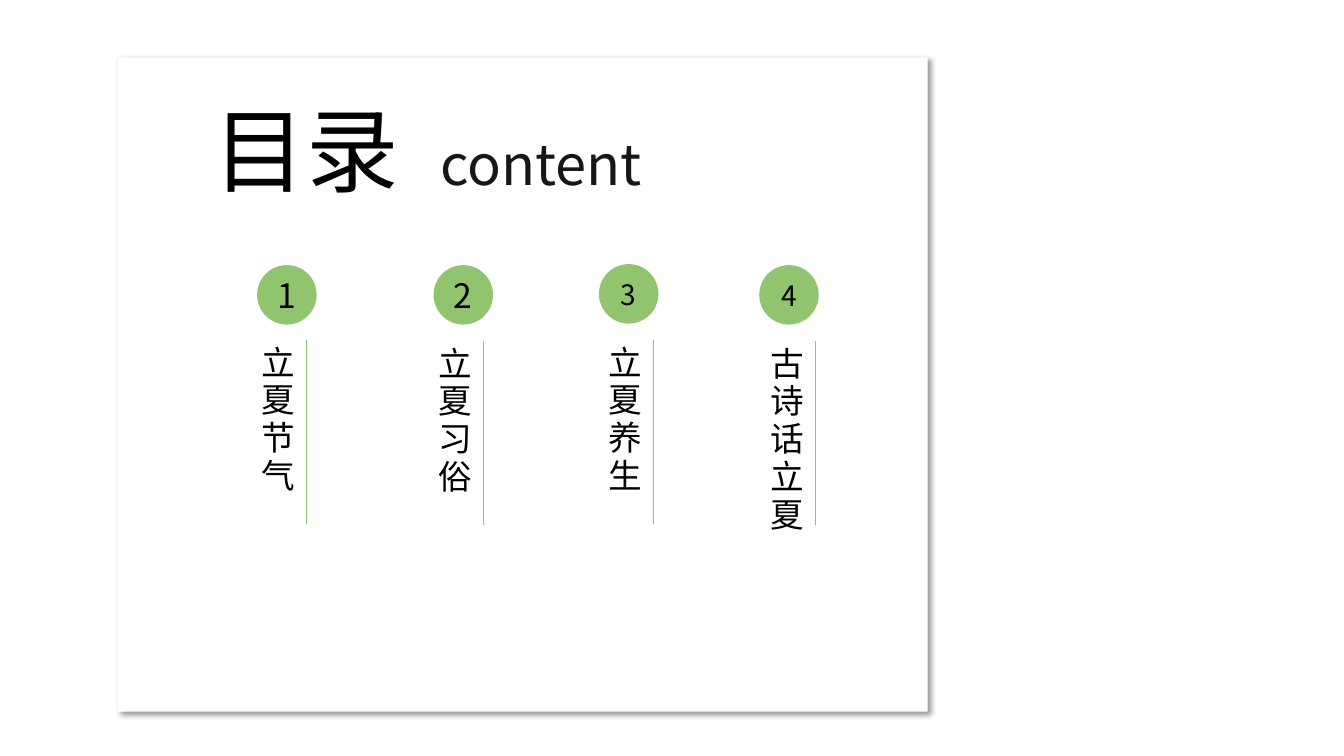
"""Build the contents slide: a shadowed card, a heading and four numbered vertical topics."""
from dataclasses import dataclass

from lxml import etree
from pptx import Presentation
from pptx.dml.color import RGBColor
from pptx.enum.shapes import MSO_CONNECTOR, MSO_SHAPE
from pptx.enum.text import MSO_ANCHOR, MSO_AUTO_SIZE, PP_ALIGN
from pptx.oxml.ns import qn
from pptx.util import Inches, Pt

STRAIGHT = MSO_CONNECTOR.STRAIGHT
RECTANGLE, OVAL = MSO_SHAPE.RECTANGLE, MSO_SHAPE.OVAL
MIDDLE, CENTER = MSO_ANCHOR.MIDDLE, PP_ALIGN.CENTER
GROW = MSO_AUTO_SIZE.SHAPE_TO_FIT_TEXT

HEADING, SUBHEADING = "目录", "content"
TOPICS = [
    {"number": "1", "label": "立夏节气", "badge": 2.55, "rule": 3.04, "top": 2.63, "rule_top": 3.37, "size": 24},
    {"number": "2", "label": "立夏习俗", "badge": 4.3, "rule": 4.79, "top": 2.63, "rule_top": 3.38, "size": 24},
    {"number": "3", "label": "立夏养生", "badge": 5.94, "rule": 6.48, "top": 2.62, "rule_top": 3.37, "size": 20},
    {"number": "4", "label": "古诗话立夏", "badge": 7.53, "rule": 8.09, "top": 2.63, "rule_top": 3.38, "size": 20},
]
SLIDE_SIZE = (13.33, 7.5)
CARD = (1.17, 0.57, 8.03, 6.49)
HEADING_BOX = (1.76, 0.92, 4.97, 1.1)
BADGE_SIZE, RULE_LENGTH = 0.59, 1.83
LABEL_SIZE, LABEL_INSET, LABEL_RISE = (0.61, 2.11), 0.65, 0.04


@dataclass(frozen=True)
class Theme:
    font: str = "Noto Sans CJK SC"
    card: str = "FFFFFF"
    ink: str = "000000"
    soft_ink: str = "181717"
    green: str = "91C46E"
    heading: int = 66
    subheading: int = 40
    label: int = 24
    rule: float = 0.5
    label_spacing: int = 3
    heading_gap: int = 15


THEME = Theme()


def inches(values):
    return [Inches(value) for value in values]


def drop_shadow():
    effects = etree.Element(qn("a:effectLst"))
    shadow = etree.SubElement(effects, qn("a:outerShdw"), blurRad=str(Pt(4)), dist=str(Pt(3)),
                              dir=str(45 * 60000), algn="tl", rotWithShape="0")
    color = etree.SubElement(shadow, qn("a:srgbClr"), val=THEME.ink)
    etree.SubElement(color, qn("a:alpha"), val="40000")
    return effects


def add_run(paragraph, text, size, color=THEME.ink, spacing=0, shadow=False):
    run = paragraph.add_run()
    run.text = text
    for name, value in {"size": Pt(size), "name": THEME.font, "bold": False}.items():
        setattr(run.font, name, value)
    run.font.color.rgb = RGBColor.from_string(color)
    properties = run.font._element
    latin = properties.find(qn("a:latin"))
    latin.addnext(etree.Element(qn("a:ea"), typeface=THEME.font))
    if spacing:
        properties.set("spc", str(spacing * 100))
    if shadow:
        latin.addprevious(drop_shadow())


def add_solid(shapes, kind, box, color):
    solid = shapes.add_shape(kind, *inches(box))
    solid.shadow.inherit = False
    solid.fill.solid()
    solid.fill.fore_color.rgb = RGBColor.from_string(color)
    solid.line.fill.background()
    return solid


def centered_paragraph(frame):
    frame.vertical_anchor = MIDDLE
    paragraph = frame.paragraphs[0]
    paragraph.alignment = CENTER
    return paragraph


def add_card(shapes):
    card = add_solid(shapes, RECTANGLE, CARD, THEME.card)
    properties = card._element.spPr
    properties.replace(properties.find(qn("a:effectLst")), drop_shadow())


def add_heading(shapes):
    frame = shapes.add_textbox(*inches(HEADING_BOX)).text_frame
    frame.word_wrap = True
    paragraph = centered_paragraph(frame)
    add_run(paragraph, HEADING, THEME.heading, shadow=True)
    add_run(paragraph, " ", THEME.heading, spacing=THEME.heading_gap)
    add_run(paragraph, SUBHEADING, THEME.subheading, THEME.soft_ink, shadow=True)


def add_topic(shapes, topic):
    badge_box = (topic["badge"], topic["top"], BADGE_SIZE, BADGE_SIZE)
    badge = add_solid(shapes, OVAL, badge_box, THEME.green)
    add_run(centered_paragraph(badge.text_frame), topic["number"], topic["size"])

    label_box = (topic["rule"] - LABEL_INSET, topic["rule_top"] - LABEL_RISE, *LABEL_SIZE)
    frame = shapes.add_textbox(*inches(label_box)).text_frame
    for name, value in {"word_wrap": True, "auto_size": GROW}.items():
        setattr(frame, name, value)
    frame._element.find(qn("a:bodyPr")).set("vert", "eaVert")
    add_run(frame.paragraphs[0], topic["label"], THEME.label, spacing=THEME.label_spacing)

    ends = (topic["rule"], topic["rule_top"], topic["rule"], topic["rule_top"] + RULE_LENGTH)
    rule = shapes.add_connector(STRAIGHT, *inches(ends))
    rule.line.color.rgb = RGBColor.from_string(THEME.green)
    rule.line.width = Pt(THEME.rule)
    etree.SubElement(rule._element.spPr, qn("a:effectLst"))


def main():
    deck = Presentation()
    deck.slide_width, deck.slide_height = inches(SLIDE_SIZE)
    shapes = deck.slides.add_slide(deck.slide_layouts[6]).shapes
    add_card(shapes)
    add_heading(shapes)
    for topic in TOPICS:
        add_topic(shapes.add_group_shape().shapes, topic)
    deck.save("out.pptx")


if __name__ == "__main__":
    main()
